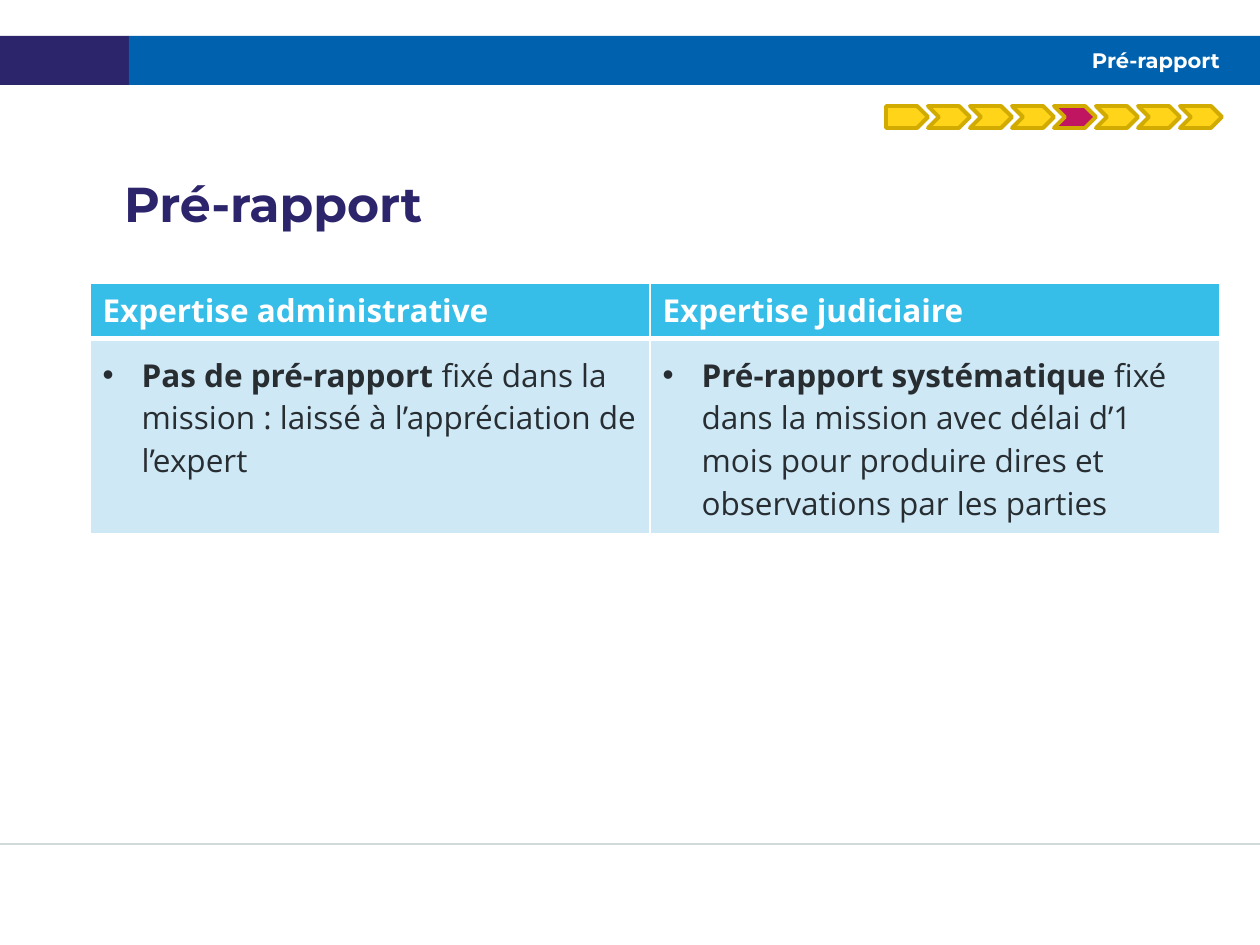
from pptx import Presentation
from pptx.dml.color import RGBColor
from pptx.enum.shapes import MSO_CONNECTOR, MSO_SHAPE
from pptx.enum.text import MSO_ANCHOR, MSO_AUTO_SIZE, PP_ALIGN
from pptx.oxml.ns import qn
from pptx.util import Emu, Pt
from lxml.etree import SubElement

NAVY = RGBColor(0x2C, 0x25, 0x6B)
BLUE = RGBColor(0x00, 0x62, 0xAE)
GREY = RGBColor(0xD2, 0xD9, 0xDA)
WHITE = RGBColor(0xFF, 0xFF, 0xFF)
SKY = RGBColor(0x36, 0xBD, 0xE8)
PALE = RGBColor(0xCE, 0xE8, 0xF6)
INK = RGBColor(0x27, 0x2D, 0x31)
GOLD = RGBColor(0xFF, 0xD4, 0x19)
OCHRE = RGBColor(0xD2, 0xAB, 0x00)
PINK = RGBColor(0xC0, 0x16, 0x62)

HEAD = "Montserrat"
TEXT = "Open Sans"
TOPIC = "Pré-rapport"
ROWS = [
    [[("Expertise administrative", True)], [("Expertise judiciaire", True)]],
    [
        [("Pas de pré-rapport ", True),
         ("fixé dans la mission : laissé à l’appréciation de l’expert", False)],
        [("Pré-rapport systématique ", True),
         ("fixé dans la mission avec délai d’1 mois pour produire dires et "
          "observations par les parties", False)],
    ],
]


def px(num):
    return Emu(round(num * 914400 / 126))


def assign(item, form):
    for key, value in form.items():
        setattr(item, key, value)


class Deck:
    def __init__(self, wide, high):
        self.file = Presentation()
        assign(self.file, {"slide_width": px(wide), "slide_height": px(high)})
        self.slide = self.file.slides.add_slide(self.file.slide_layouts[1])
        self.shapes = self.slide.shapes

    def words(self, para, text, name, size, color, bold=True):
        run = para.add_run()
        run.text = text
        assign(run.font, {"name": name, "size": Pt(size), "bold": bold})
        run.font.color.rgb = color

    def shape(self, kind, box, fill, edge=None):
        shape = self.shapes.add_shape(kind, *map(px, box))
        shape.shadow.inherit = False
        shape.fill.solid()
        shape.fill.fore_color.rgb = fill
        if edge:
            shape.line.color.rgb = edge
            shape.line.width = Pt(2.25)
        else:
            shape.line.fill.background()

    def rule(self, left, top, right, color):
        line = self.shapes.add_connector(
            MSO_CONNECTOR.STRAIGHT, px(left), px(top), px(right), px(top))
        line.line.color.rgb = color
        line.line.width = Pt(0.75)
        SubElement(line._element.spPr, qn("a:effectLst"))

    def holder(self, spot, box, text, size, color, anchor, form, inset=0):
        item = self.slide.placeholders[spot]
        self.shapes._spTree.append(item._element)
        assign(item, dict(zip(("left", "top", "width", "height"), map(px, box))))
        frame = item.text_frame
        assign(frame, {
            "margin_left": 0, "margin_top": 0, "margin_right": 0,
            "margin_bottom": 0, "word_wrap": True,
            "auto_size": MSO_AUTO_SIZE.NONE, "vertical_anchor": anchor})
        para = frame.paragraphs[0]
        props = para._p.get_or_add_pPr()
        props.set("marL", str(px(inset)))
        props.set("indent", "0")
        SubElement(props, qn("a:buNone"))
        assign(para, {"space_before": Pt(0), **form})
        self.words(para, text, HEAD, size, color)

    def border(self, cell, widths):
        props = cell._tc.get_or_add_tcPr()
        for side, width in widths.items():
            line = SubElement(props, qn("a:ln" + side), w=str(Pt(width)))
            fill = SubElement(line, qn("a:solidFill"))
            SubElement(fill, qn("a:srgbClr"), val=str(WHITE))

    def bullet(self, para):
        props = para._p.get_or_add_pPr()
        props.set("marL", str(px(39)))
        props.set("indent", str(-px(39)))
        SubElement(props, qn("a:buFont"), typeface="Arial")
        SubElement(props, qn("a:buChar"), char="•")

    def table(self, left, top, cols, highs, rows):
        box = map(px, (left, top, sum(cols), sum(highs)))
        grid = self.shapes.add_table(len(highs), len(cols), *box).table
        for col, wide in zip(grid.columns, cols):
            col.width = px(wide)
        for row, high, cells in zip(grid.rows, highs, rows):
            row.height = px(high)
            first = cells is rows[0]
            for cell, runs in zip(row.cells, cells):
                self.border(cell, {"L": 1, "R": 1, "T": 1 if first else 3,
                                   "B": 3 if first else 1})
                cell.fill.solid()
                cell.fill.fore_color.rgb = SKY if first else PALE
                para = cell.text_frame.paragraphs[0]
                if not first:
                    cell.margin_top = px(15)
                    self.bullet(para)
                for text, bold in runs:
                    self.words(para, text, TEXT, 18, WHITE if first else INK, bold)

    def steps(self, left, top, wide, high, count, now):
        for spot in range(count):
            kind = MSO_SHAPE.CHEVRON if spot else MSO_SHAPE.PENTAGON
            fill = PINK if spot == now else GOLD
            self.shape(kind, (left + spot * wide, top, wide, high), fill, OCHRE)


def main():
    deck = Deck(1260, 945)
    deck.shape(MSO_SHAPE.RECTANGLE, (0, 36, 129, 49), NAVY)
    deck.shape(MSO_SHAPE.RECTANGLE, (129, 36, 1131, 49), BLUE)
    deck.rule(0, 844, 1260, GREY)
    deck.holder(0, (139, 36, 1081, 49), TOPIC, 12, WHITE, MSO_ANCHOR.MIDDLE,
                {"alignment": PP_ALIGN.RIGHT})
    deck.table(90, 283, (560, 570), (55, 195), ROWS)
    deck.holder(1, (86, 180, 1131, 64), TOPIC, 28, NAVY, MSO_ANCHOR.TOP,
                {"alignment": PP_ALIGN.LEFT, "line_spacing": 0.9}, 38)
    deck.steps(886, 106, 42, 22, 8, 4)
    deck.file.save("out.pptx")


if __name__ == "__main__":
    main()
